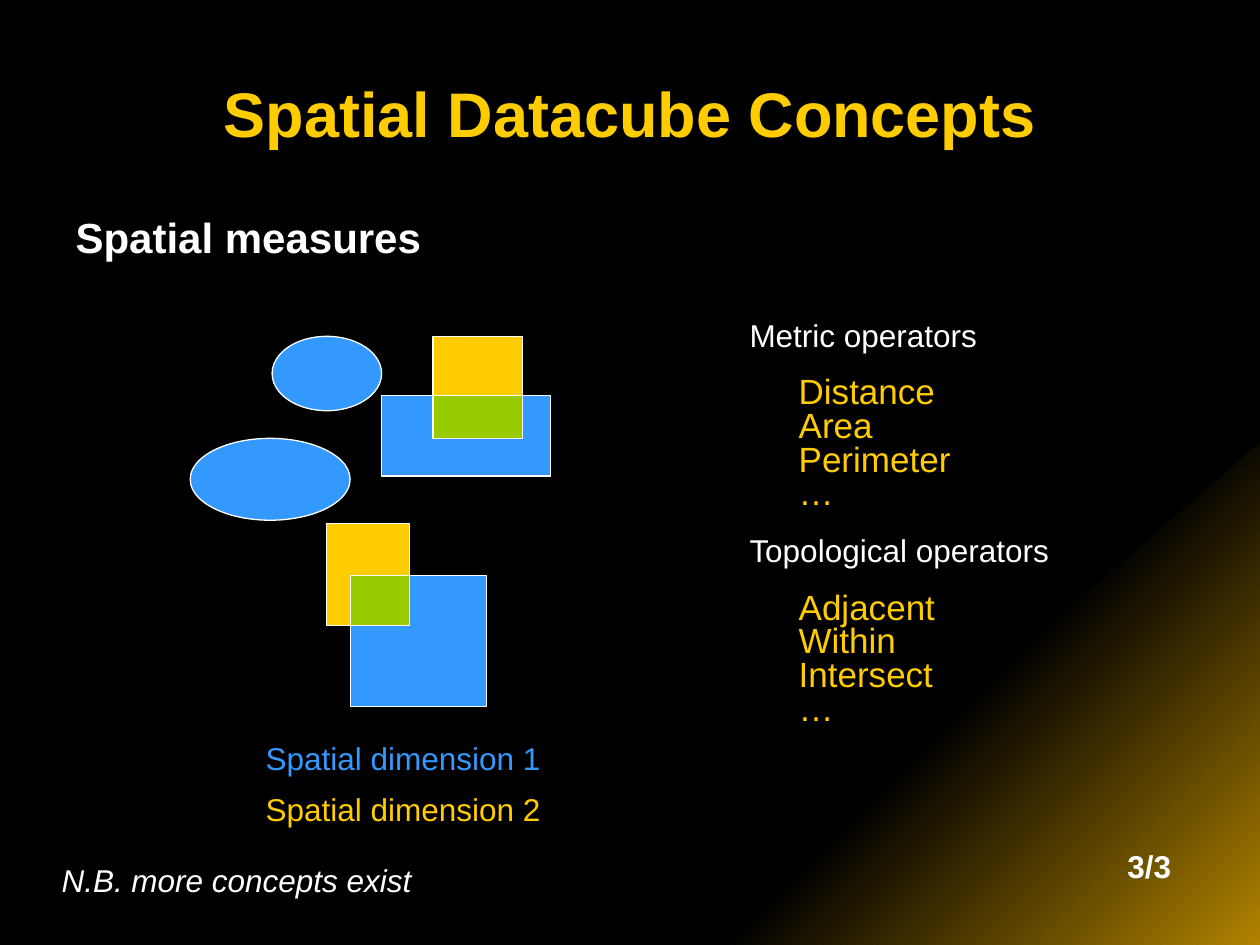
from dataclasses import dataclass

from lxml import etree
from pptx import Presentation
from pptx.dml.color import RGBColor
from pptx.enum.shapes import MSO_SHAPE
from pptx.enum.text import MSO_ANCHOR, MSO_AUTO_SIZE, PP_ALIGN
from pptx.oxml.ns import qn
from pptx.slide import Slide
from pptx.util import Pt

ELLIPSE, RECTANGLE = MSO_SHAPE.OVAL, MSO_SHAPE.RECTANGLE
LEFT, CENTER = PP_ALIGN.LEFT, PP_ALIGN.CENTER
TOP, MIDDLE = MSO_ANCHOR.TOP, MSO_ANCHOR.MIDDLE
NO_AUTOSIZE = MSO_AUTO_SIZE.NONE

COLORS = {
    "background": "000000",
    "text": "FFFFFF",
    "first": "3399FF",
    "second": "FFCC00",
    "overlap": "99CC00",
    "glow": "B08200",
}


def color(name):
    return RGBColor.from_string(COLORS[name])


def intersection(first, second):
    left, top = max(first[0], second[0]), max(first[1], second[1])
    right = min(first[0] + first[2], second[0] + second[2])
    bottom = min(first[1] + first[3], second[1] + second[3])
    return left, top, right - left, bottom - top


@dataclass
class SlideBuilder:
    """Draws styled elements on one slide, with all lengths in points."""

    slide: Slide
    font_name: str = "Arial"
    line_width: float = 0.75

    def background(self, name):
        fill = self.slide.background.fill
        fill.solid()
        fill.fore_color.rgb = color(name)

    def corner(self, points, dark, light):
        (start_x, start_y), *others = [(Pt(x), Pt(y)) for x, y in points]
        builder = self.slide.shapes.build_freeform(start_x, start_y)
        builder.add_line_segments(others, close=True)
        shape = builder.convert_to_shape()
        shape.shadow.inherit = False
        shape.line.fill.background()
        shape.fill.gradient()
        shape.fill.gradient_angle = 315
        stops = zip(shape.fill.gradient_stops, (0.5, 1), (dark, light))
        for stop, position, name in stops:
            stop.position = position
            stop.color.rgb = color(name)

    def figure(self, kind, box, name):
        shape = self.slide.shapes.add_shape(kind, *map(Pt, box))
        shape.shadow.inherit = False
        shape.fill.solid()
        shape.fill.fore_color.rgb = color(name)
        shape.line.color.rgb = color("text")
        shape.line.width = Pt(self.line_width)

    def format(self, paragraph, size, name, bold=False, italic=False):
        font = paragraph.font
        font.name, font.size = self.font_name, Pt(size)
        font.bold, font.italic = bold, italic
        font.color.rgb = color(name)

    def placeholder(self, index, box, text, size, name, align, anchor):
        shape = self.slide.placeholders[index]
        self.slide.shapes.element.append(shape.element)
        shape.left, shape.top, shape.width, shape.height = map(Pt, box)
        frame = shape.text_frame
        frame.text = text
        frame.auto_size = NO_AUTOSIZE
        frame.vertical_anchor = anchor
        paragraph = frame.paragraphs[0]
        paragraph.alignment = align
        paragraph.space_before = Pt(0)
        properties = paragraph._p.get_or_add_pPr()
        properties.set("marL", "0")
        properties.set("indent", "0")
        etree.SubElement(properties, qn("a:buNone"))
        self.format(paragraph, size, name, bold=True)

    def text(self, box, lines, name, size=18, spacing=None, **style):
        frame = self.slide.shapes.add_textbox(*map(Pt, box)).text_frame
        frame.word_wrap = True
        frame.text = "\n".join(lines)
        for paragraph in frame.paragraphs:
            paragraph.line_spacing = spacing
            self.format(paragraph, size, name, **style)


def main():
    presentation = Presentation()
    presentation.slide_width, presentation.slide_height = Pt(720), Pt(540)
    builder = SlideBuilder(
        presentation.slides.add_slide(presentation.slide_layouts[1])
    )
    builder.background("background")
    builder.corner([(720, 540), (388, 540), (720, 252.7)], "background", "glow")
    builder.placeholder(0, (36, 22, 648, 84), "Spatial Datacube Concepts",
                        36, "second", CENTER, MIDDLE)
    builder.placeholder(1, (36, 117, 648, 366), "Spatial measures",
                        24, "text", LEFT, TOP)

    for box in [(155.5, 192.2, 62.6, 42.5), (108.7, 250.5, 91.4, 46.8)]:
        builder.figure(ELLIPSE, box, "first")
    overlapping_pairs = [
        ((200.2, 329, 77.8, 74.9), (186.5, 299.2, 47.5, 58.3)),
        ((218.2, 226, 96.5, 46), (247.5, 192.2, 51.1, 58.3)),
    ]
    for first, second in overlapping_pairs:
        builder.figure(RECTANGLE, first, "first")
        builder.figure(RECTANGLE, second, "second")
        builder.figure(RECTANGLE, intersection(first, second), "overlap")

    for number, name in enumerate(("first", "second"), 1):
        box = (144.7, 390 + 29 * number, 178, 29)
        builder.text(box, [f"Spatial dimension {number}"], name)

    operators = [
        (177, "Metric operators", ["Distance", "Area", "Perimeter", "…"]),
        (300, "Topological operators", ["Adjacent", "Within", "Intersect", "…"]),
    ]
    for top, heading, names in operators:
        builder.text((421.2, top, 265, 36), [heading], "text")
        builder.text((449.3, top + 35.5, 201, 84), names, "second", 20, 0.8)

    builder.text((28.1, 488.2, 476.6, 29), ["N.B. more concepts exist"],
                 "text", italic=True)
    builder.text((637.2, 480.5, 59.8, 36), ["3/3"], "text", bold=True)
    presentation.save("out.pptx")


if __name__ == "__main__":
    main()
